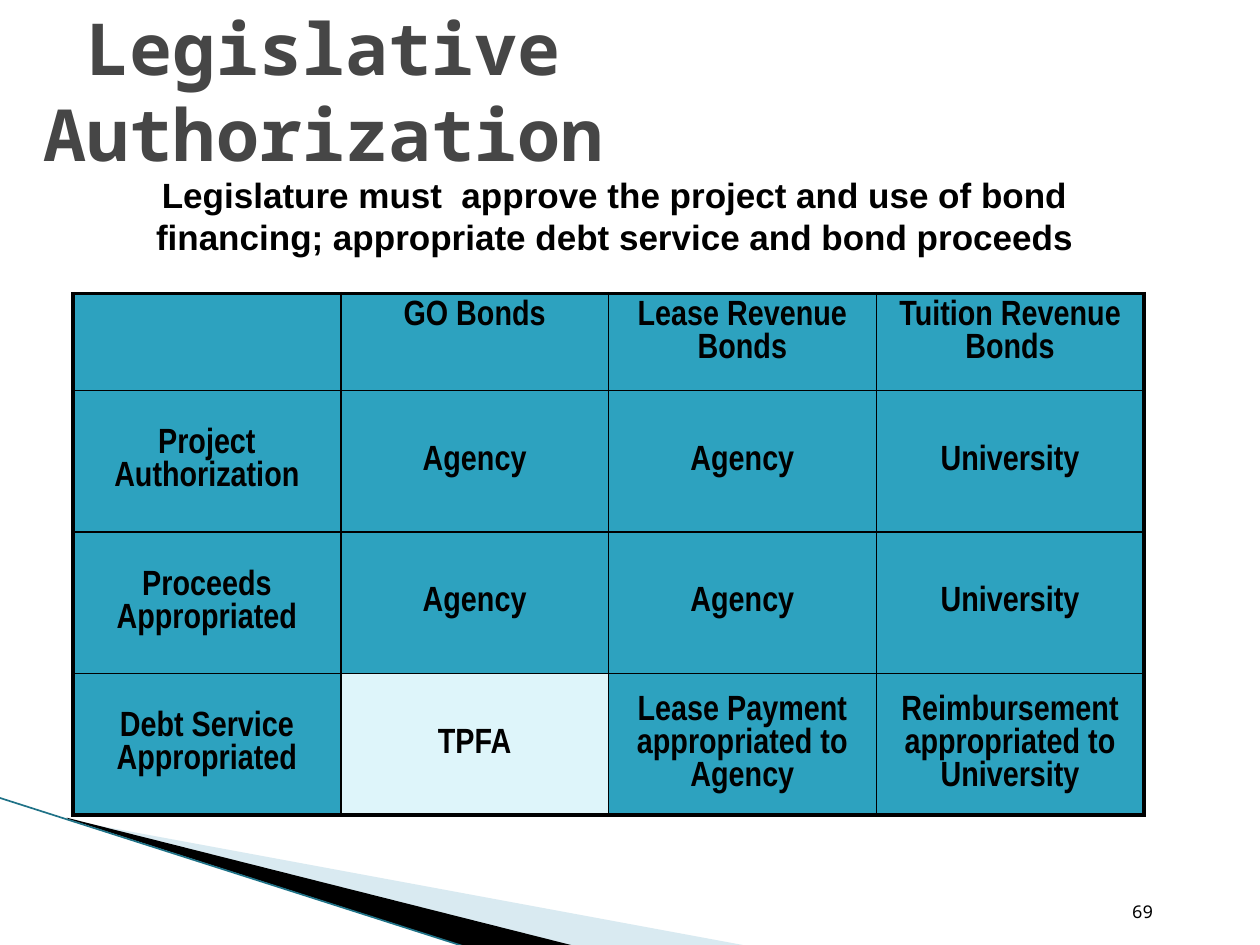
from lxml import etree
from pptx import Presentation
from pptx import util as u
from pptx.dml.color import RGBColor
from pptx.enum import shapes, text
from pptx.oxml import ns

Inches, Pt = u.Inches, u.Pt

BLACK = RGBColor(0x00, 0x00, 0x00)
GRAY = RGBColor(0x46, 0x46, 0x46)
TEAL = RGBColor(0x2D, 0xA2, 0xBF)
DARK_TEAL = RGBColor(0x1F, 0x72, 0x87)
PALE_TEAL = RGBColor(0xDE, 0xF5, 0xFA)
SWOOSH_BLUE = RGBColor(0xA0, 0xCB, 0xDC)

MONO, SANS, NARROW = "Noto Sans Mono", "Arial", "Arial Narrow"
LEFT, CENTER, RIGHT = (text.PP_ALIGN.LEFT, text.PP_ALIGN.CENTER,
                       text.PP_ALIGN.RIGHT)
TOP, MIDDLE, BOTTOM = (text.MSO_ANCHOR.TOP, text.MSO_ANCHOR.MIDDLE,
                       text.MSO_ANCHOR.BOTTOM)

HEADERS = ["", "GO Bonds", "Lease Revenue Bonds", "Tuition Revenue Bonds"]
STEPS = [
    ["Project Authorization", "Agency", "Agency", "University"],
    ["Proceeds Appropriated", "Agency", "Agency", "University"],
    ["Debt Service Appropriated", "TPFA",
     "Lease Payment appropriated to Agency",
     "Reimbursement appropriated to University"],
]


class SlideBuilder:
    """Holds the slide and the style of its elements."""

    outer_border, inner_border = Pt(2.25), Pt(1)

    def __init__(self, slide):
        self.slide = slide

    def style(self, paragraph, font_name, size, bold, color, align):
        paragraph.alignment = align
        font = paragraph.font
        font.name, font.size, font.bold = font_name, Pt(size), bold
        font.color.rgb = color

    def label(self, words, box, font_name, size, bold=True, color=BLACK,
              align=LEFT, anchor=TOP):
        frame = self.slide.shapes.add_textbox(*map(Inches, box)).text_frame
        frame.word_wrap = True
        frame.vertical_anchor = anchor
        paragraph = frame.paragraphs[0]
        paragraph.text = words
        self.style(paragraph, font_name, size, bold, color, align)

    def polygon(self, points, color, opacity=None):
        start, *rest = [(Inches(x), Inches(y)) for x, y in points]
        builder = self.slide.shapes.build_freeform(*start)
        builder.add_line_segments(rest, close=True)
        shape = builder.convert_to_shape()
        shape.shadow.inherit = False
        shape.line.fill.background()
        shape.fill.solid()
        shape.fill.fore_color.rgb = color
        if opacity is not None:
            srgb = shape.fill._xPr.find(".//" + ns.qn("a:srgbClr"))
            alpha = etree.SubElement(srgb, ns.qn("a:alpha"))
            alpha.set("val", str(opacity * 1000))

    def line(self, start, end, color, width):
        connector = self.slide.shapes.add_connector(
            shapes.MSO_CONNECTOR.STRAIGHT, *map(Inches, start + end))
        connector.line.color.rgb = color
        connector.line.width = Pt(width)
        etree.SubElement(connector._element.spPr, ns.qn("a:effectLst"))

    def borders(self, cell, outer_sides):
        properties = cell._tc.get_or_add_tcPr()
        for position, side in enumerate("LRTB"):
            width = self.outer_border if side in outer_sides else self.inner_border
            edge = etree.Element(ns.qn("a:ln" + side), w=str(int(width)))
            fill = etree.SubElement(edge, ns.qn("a:solidFill"))
            etree.SubElement(fill, ns.qn("a:srgbClr"), val=str(BLACK))
            properties.insert(position, edge)

    def table(self, rows, box, header_height, highlight):
        row_count, column_count = len(rows), len(rows[0])
        table = self.slide.shapes.add_table(
            row_count, column_count, *map(Inches, box)).table
        table.first_row = table.horz_banding = False
        body_height = (box[3] - header_height) / (row_count - 1)
        for r, row in enumerate(rows):
            table.rows[r].height = Inches(body_height if r else header_height)
            for c, words in enumerate(row):
                cell = table.cell(r, c)
                cell.text = words
                cell.vertical_anchor = MIDDLE if r else TOP
                cell.fill.solid()
                cell.fill.fore_color.rgb = (
                    PALE_TEAL if words == highlight else TEAL)
                self.style(cell.text_frame.paragraphs[0], NARROW, 20, True,
                           BLACK, CENTER)
                on_edge = {"L": c == 0, "R": c == column_count - 1,
                           "T": r == 0, "B": r == row_count - 1}
                self.borders(cell, [s for s in on_edge if on_edge[s]])


def main():
    prs = Presentation()
    prs.slide_width, prs.slide_height = Inches(10), Inches(7.5)
    builder = SlideBuilder(prs.slides.add_slide(prs.slide_layouts[6]))

    # Corner swoosh
    builder.polygon([(0.55, 6.51), (5.95, 7.51), (4.56, 7.51), (0.55, 6.5)],
                    SWOOSH_BLUE, opacity=40)
    builder.polygon([(0.53, 6.49), (4.57, 7.51), (3.72, 7.52), (0.54, 6.5)],
                    BLACK)
    builder.line((-0.01, 6.33), (3.71, 7.52), DARK_TEAL, 0.95)

    # Title
    builder.label(" Legislative Authorization", (0.25, 0.17, 9, 1.08), MONO,
                  41, color=GRAY, anchor=MIDDLE)

    # Approval matrix
    builder.table([HEADERS] + STEPS, (0.58, 2.33, 8.5, 4.12),
                  header_height=0.75, highlight="TPFA")

    # Summary and slide number
    builder.label("Legislature must  approve the project and use of bond "
                  "financing; appropriate debt service and bond proceeds",
                  (0.67, 1.33, 8.42, 0.77), SANS, 20, align=CENTER)
    builder.label("69", (7.17, 6.87, 2.08, 0.5), MONO, 10, bold=False,
                  align=RIGHT, anchor=BOTTOM)

    prs.save("out.pptx")


if __name__ == "__main__":
    main()
